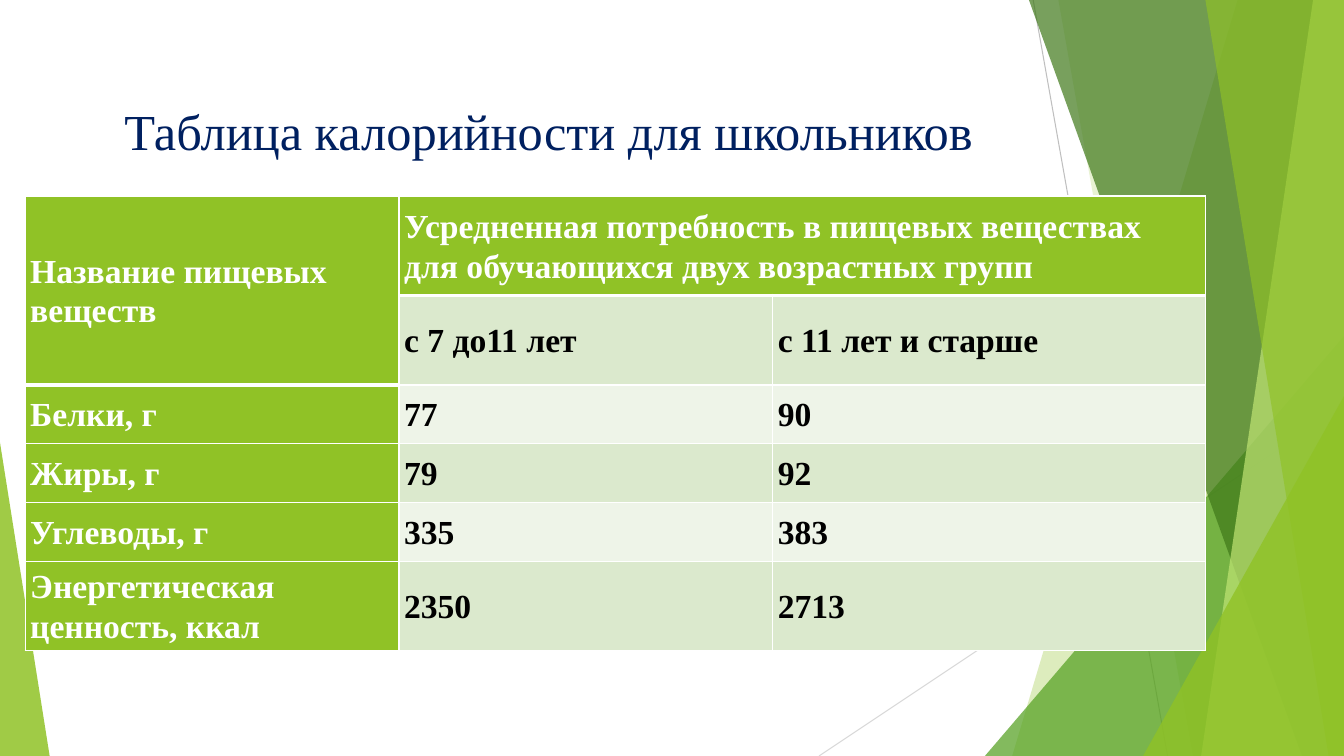
import pptx
import pptx.util
import pptx.dml.color
import pptx.enum.shapes
import pptx.enum.text
import pptx.oxml
import pptx.oxml.ns

Pt = pptx.util.Pt
RGB = pptx.dml.color.RGBColor
MIDDLE = pptx.enum.text.MSO_ANCHOR.MIDDLE
TRIANGLE = pptx.enum.shapes.MSO_SHAPE.ISOSCELES_TRIANGLE
STRAIGHT = pptx.enum.shapes.MSO_CONNECTOR.STRAIGHT

WHITE = RGB(0xFF, 0xFF, 0xFF)
BLACK = RGB(0x00, 0x00, 0x00)
NAVY = RGB(0x00, 0x20, 0x60)
LIME = RGB(0x90, 0xC2, 0x26)
GREEN = RGB(0x54, 0xA0, 0x21)
DARK = RGB(0x3F, 0x78, 0x19)
LIGHT = RGB(0xC0, 0xE4, 0x74)
TINT = RGB(0xDB, 0xE9, 0xCD)
PALE = RGB(0xEE, 0xF4, 0xE8)
GREY = RGB(0xBF, 0xBF, 0xBF)
SILVER = RGB(0xD9, 0xD9, 0xD9)
FONT = "Times New Roman"
WIDTH, HEIGHT = 960, 540


def write(par, text, size, color, bold):
    run = par.add_run()
    run.text = text
    run.font.name = FONT
    run.font.size = Pt(size)
    run.font.bold = bold
    run.font.color.rgb = color


deck = pptx.Presentation()
deck.slide_width = Pt(WIDTH)
deck.slide_height = Pt(HEIGHT)
slide = deck.slides.add_slide(deck.slide_layouts[5])
shapes = slide.shapes

for left, top, right, color in [(738, 0, 834, GREY), (WIDTH, 290, 585, SILVER)]:
    line = shapes.add_connector(STRAIGHT, Pt(left), Pt(top), Pt(right), Pt(HEIGHT))
    line.line.color.rgb = color
    line.line.width = Pt(0.75)
    line._element.spPr.append(pptx.oxml.parse_xml(
        f'<a:effectLst {pptx.oxml.ns.nsdecls("a")}/>'))

facets = [
    ("band", 884, 723, LIME, 30),
    ("band", 756, 852, LIME, 20),
    ("peak", (703.5, 240, 256.5, 300), 1, GREEN, 72),
    ("band", 735, 929.5, DARK, 70),
    ("band", 938, 858, LIGHT, 70),
    ("band", 861, 949, LIME, 65),
    ("peak", (816.5, 283, 143.5, 257), 1, LIME, 80),
    ("peak", (0, 316, 35.5, 224), 0, LIME, 85),
]
for kind, first, second, color, alpha in facets:
    if kind == "band":
        pen = shapes.build_freeform(first, 0, scale=12700.0)
        pen.add_line_segments([(WIDTH, 0), (WIDTH, HEIGHT), (second, HEIGHT)])
        facet = pen.convert_to_shape()
    else:
        facet = shapes.add_shape(TRIANGLE, *[Pt(size) for size in first])
        facet.adjustments[0] = second
    facet.shadow.inherit = False
    facet.line.fill.background()
    facet.fill.solid()
    facet.fill.fore_color.rgb = color
    tone = facet._element.spPr.find(".//" + pptx.oxml.ns.qn("a:srgbClr"))
    tone.append(pptx.oxml.parse_xml(
        f'<a:alpha {pptx.oxml.ns.nsdecls("a")} val="{alpha * 1000}"/>'))

title = shapes.title
title.left, title.top, title.width, title.height = Pt(53.5), Pt(20), Pt(677), Pt(98)
title.text_frame.vertical_anchor = pptx.enum.text.MSO_ANCHOR.BOTTOM
head = title.text_frame.paragraphs[0]
head.alignment = pptx.enum.text.PP_ALIGN.CENTER
write(head, "Таблица калорийности для школьников", 36, NAVY, False)

rows = [
    ("Название пищевых веществ",
     "Усредненная потребность в пищевых веществах для обучающихся двух возрастных групп", ""),
    ("", "с 7 до11 лет", "с 11 лет и старше"),
    ("Белки, г", "77", "90"),
    ("Жиры, г", "79", "92"),
    ("Углеводы, г", "335", "383"),
    ("Энергетическая ценность, ккал", "2350", "2713"),
]
wide = [267, 267, 309]
high = [71, 64, 42, 42, 42, 64]
table = shapes.add_table(len(rows), len(wide), Pt(18), Pt(140),
                         Pt(sum(wide)), Pt(sum(high))).table
table.horz_banding = False
for column, size in zip(table.columns, wide):
    column.width = Pt(size)
for row, size in zip(table.rows, high):
    row.height = Pt(size)
table.cell(0, 0).merge(table.cell(1, 0))
table.cell(0, 1).merge(table.cell(0, 2))

for r, texts in enumerate(rows):
    for c, text in enumerate(texts):
        cell = table.cell(r, c)
        green = r == 0 or c == 0
        cell.fill.solid()
        cell.fill.fore_color.rgb = LIME if green else TINT if r % 2 else PALE
        cell.vertical_anchor = MIDDLE
        cell.margin_left = cell.margin_right = Pt(3.6)
        cell.margin_top = cell.margin_bottom = Pt(3.6)
        thick = r == 0 or (r, c) == (1, 0)
        for i, side in enumerate("LRTB"):
            weight = 3 if thick and side == "B" else 1
            cell._tc.tcPr.insert(i, pptx.oxml.parse_xml(
                f'<a:ln{side} {pptx.oxml.ns.nsdecls("a")} w="{Pt(weight)}">'
                f'<a:solidFill><a:srgbClr val="{WHITE}"/></a:solidFill></a:ln{side}>'))
        if text:
            par = cell.text_frame.paragraphs[0]
            par.line_spacing = 1.07
            par.space_after = Pt(8)
            write(par, text, 24, WHITE if green else BLACK, True)

deck.save("out.pptx")
